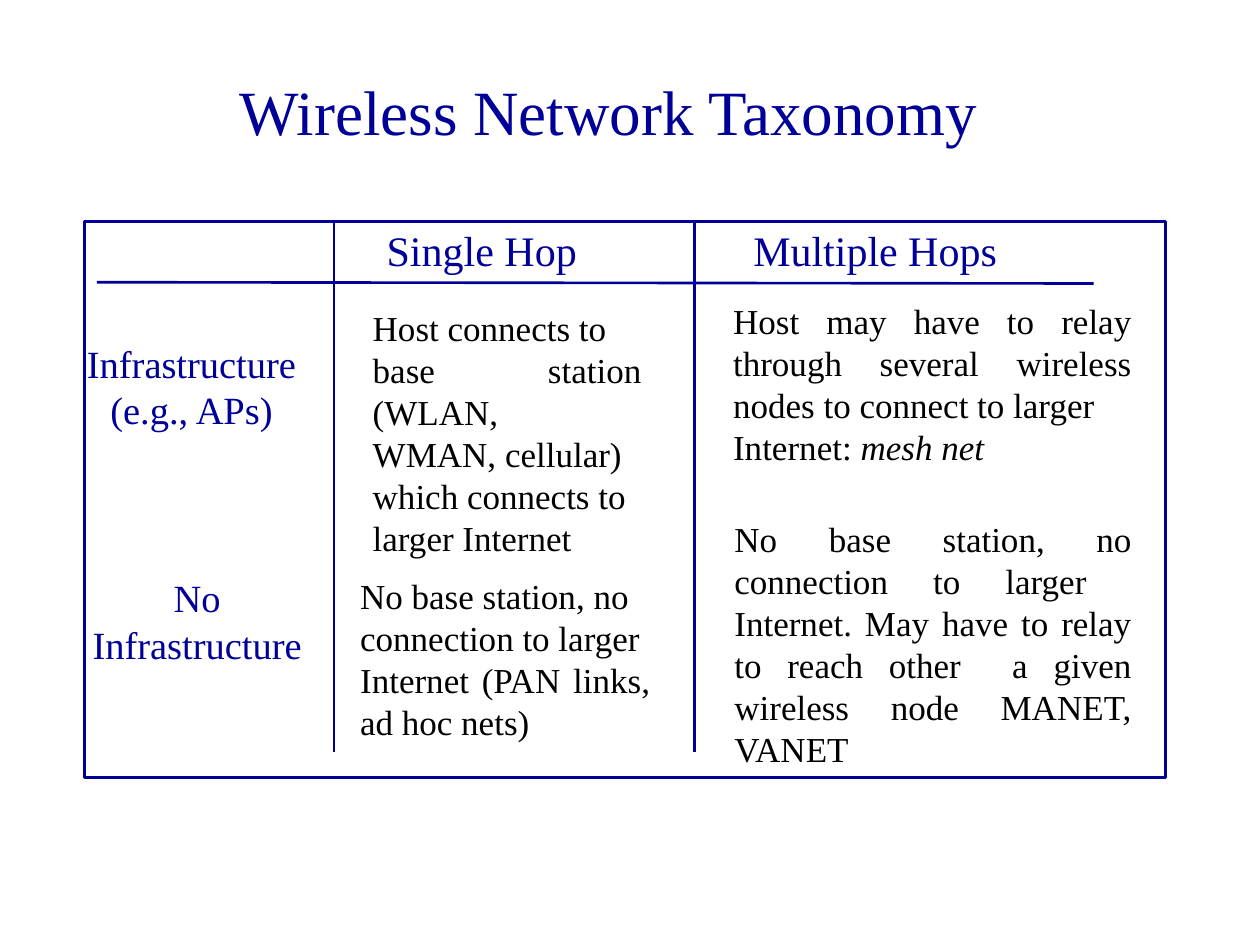
from dataclasses import dataclass
from typing import Any

from lxml.etree import SubElement
from pptx import Presentation
from pptx.dml.color import RGBColor
from pptx.enum.shapes import MSO_CONNECTOR as Connector, MSO_SHAPE as Shape
from pptx.enum.text import MSO_ANCHOR as Anchor, PP_ALIGN as Align
from pptx.oxml.ns import qn
from pptx.util import Inches, Pt


@dataclass(frozen=True)
class Theme:
    font: str = "Times New Roman"
    navy: RGBColor = RGBColor(0x00, 0x00, 0x99)
    black: RGBColor = RGBColor(0x00, 0x00, 0x00)
    title: Pt = Pt(36)
    column: Pt = Pt(24)
    row: Pt = Pt(22)
    body: Pt = Pt(20)
    line: Pt = Pt(1.5)


@dataclass(frozen=True)
class Label:
    """Text in a grid cell: one entry per paragraph, with an optional italic ending."""
    left: float
    top: float
    width: float
    height: float
    lines: tuple[str, ...]
    size: Pt
    color: RGBColor
    align: Align
    wrap: bool = False
    italic_end: str = ""


THEME = Theme()
HEADING = {"size": THEME.column, "color": THEME.navy, "align": Align.LEFT}
ROW = {"size": THEME.row, "color": THEME.navy, "align": Align.CENTER}
BODY = {"size": THEME.body, "color": THEME.black, "align": Align.JUSTIFY}

LABELS = [
    # Column headings
    Label(2.97, 1.73, 1.72, 0.51, ("Single Hop",), **HEADING),
    Label(5.88, 1.73, 2.15, 0.51, ("Multiple Hops",), **HEADING),
    # Row headings
    Label(0.56, 2.65, 1.92, 0.84, ("Infrastructure", "(e.g., APs)"), **ROW),
    Label(0.61, 4.51, 1.91, 0.84, ("No", "Infrastructure"), **ROW),
    # Single hop cells
    Label(2.86, 2.38, 2.33, 1.79,
          ("Host connects to ", "base station (WLAN,", "WMAN, cellular) ",
           "which connects to ", "larger Internet"), **BODY),
    Label(2.76, 4.51, 2.5, 1.45,
          ("No base station, no", "connection to larger ",
           "Internet (PAN links, ", "ad hoc nets)"), **BODY),
    # Multiple hops cells
    Label(5.72, 2.33, 3.36, 1.45,
          ("Host may have to relay through several wireless nodes "
           "to connect to larger ", "Internet: "),
          wrap=True, italic_end="mesh net", **BODY),
    Label(5.73, 4.06, 3.35, 2.12,
          ("No base station, no connection to larger  Internet. May have to relay "
           "to reach other  a given wireless node MANET, VANET",),
          wrap=True, **BODY),
]

FRAME = (0.67, 1.76, 8.58, 4.41)
RULES = [
    (0.77, 2.24, 8.68, 2.25),
    *((x, 1.76, x, 5.97) for x in (2.65, 5.51)),
]


def set_attributes(target: Any, values: dict[str, Any]) -> None:
    for name, value in values.items():
        setattr(target, name, value)


def add_run(paragraph: Any, text: str, size: Pt, color: RGBColor,
            italic: bool = False) -> None:
    run = paragraph.add_run()
    run.text = text
    set_attributes(run.font, {"name": THEME.font, "size": size,
                              "bold": False, "italic": italic})
    run.font.color.rgb = color


def add_title(slide: Any, text: str) -> None:
    title = slide.shapes.title
    set_attributes(title, {"left": Inches(0.58), "top": Inches(0.25),
                           "width": Inches(8.5), "height": Inches(1.25)})
    title.text_frame.vertical_anchor = Anchor.MIDDLE
    paragraph = title.text_frame.paragraphs[0]
    paragraph.alignment = Align.CENTER
    add_run(paragraph, text, THEME.title, THEME.navy)


def add_label(slide: Any, label: Label) -> None:
    box = slide.shapes.add_textbox(
        *map(Inches, (label.left, label.top, label.width, label.height)))
    frame = box.text_frame
    frame.word_wrap = label.wrap
    for index, line in enumerate(label.lines):
        paragraph = frame.add_paragraph() if index else frame.paragraphs[0]
        paragraph.alignment = label.align
        add_run(paragraph, line, label.size, label.color)
    if label.italic_end:
        add_run(paragraph, label.italic_end, label.size, label.color, italic=True)


def style_line(shape: Any) -> None:
    shape.line.color.rgb = THEME.navy
    shape.line.width = THEME.line


def add_frame(slide: Any) -> None:
    frame = slide.shapes.add_shape(Shape.RECTANGLE, *map(Inches, FRAME))
    frame.shadow.inherit = False
    frame.fill.background()
    style_line(frame)


def add_rule(slide: Any, ends: tuple[float, ...]) -> None:
    rule = slide.shapes.add_connector(Connector.STRAIGHT, *map(Inches, ends))
    style_line(rule)
    SubElement(rule._element.spPr, qn("a:effectLst"))


def main() -> None:
    presentation = Presentation()
    set_attributes(presentation, {"slide_width": Inches(10),
                                  "slide_height": Inches(7.5)})
    slide = presentation.slides.add_slide(presentation.slide_layouts[5])

    add_title(slide, "Wireless Network Taxonomy")
    for label in LABELS:
        add_label(slide, label)

    # Grid around the cells
    add_frame(slide)
    for ends in RULES:
        add_rule(slide, ends)

    presentation.save("out.pptx")


if __name__ == "__main__":
    main()
